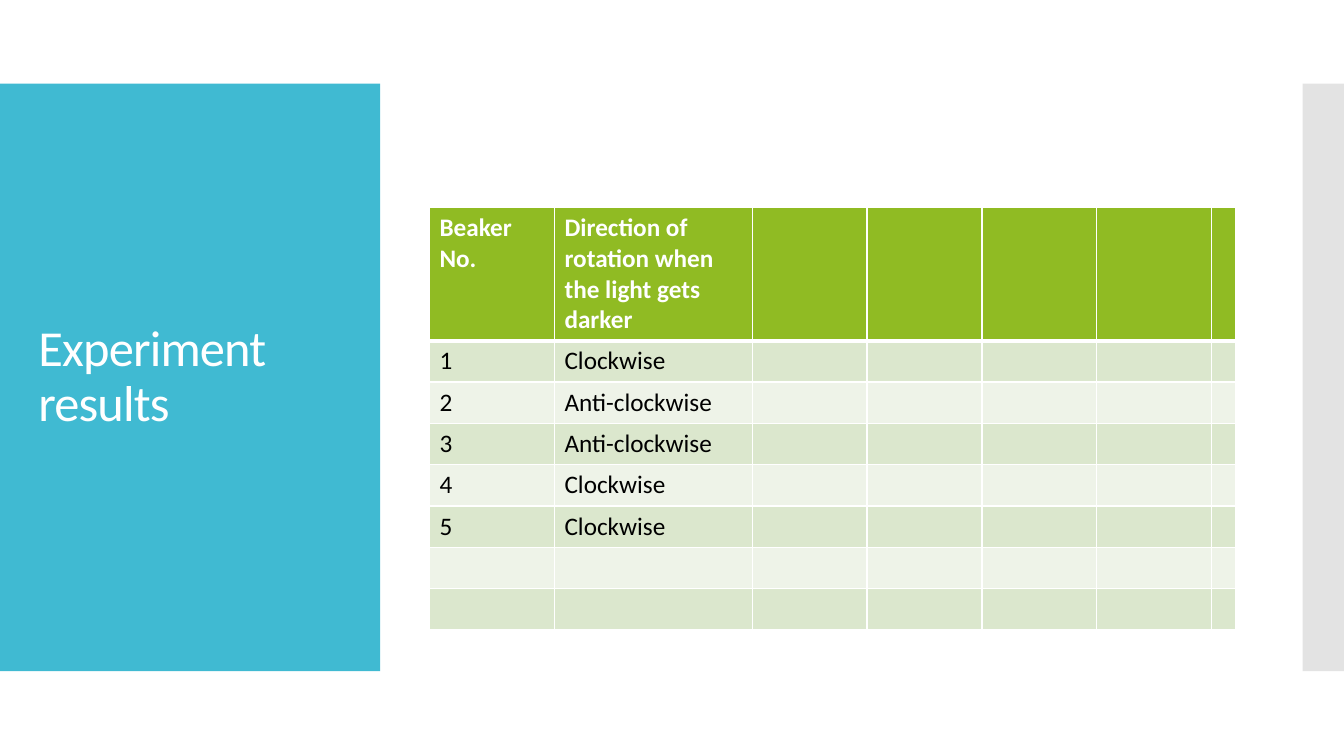
from lxml import etree
from pptx import Presentation
from pptx.dml.color import RGBColor
from pptx.enum.shapes import MSO_SHAPE
from pptx.enum.text import MSO_ANCHOR, MSO_AUTO_SIZE, PP_ALIGN
from pptx.oxml.ns import qn
from pptx.util import Emu, Pt

RECTANGLE = MSO_SHAPE.RECTANGLE
MIDDLE = MSO_ANCHOR.MIDDLE
LEFT = PP_ALIGN.LEFT
NO_AUTOFIT = MSO_AUTO_SIZE.NONE

EMU_PER_PX = 9144  # 100 px to the inch
TITLE_ONLY = 5

WHITE, BLACK = "FFFFFF", "000000"
TEAL, GREY, GREEN = "40BAD2", "C8C8C8", "90BB23"
BANDS = ("DBE7CD", "EEF3E8")

COLUMN_WIDTHS = [124, 196] + [114] * 4 + [23]
ROW_HEIGHTS = [127] + [41] * 7
RESULTS = [
    ("Beaker No.", "Direction of rotation when the light gets darker"),
    ("1", "Clockwise"),
    ("2", "Anti-clockwise"),
    ("3", "Anti-clockwise"),
    ("4", "Clockwise"),
    ("5", "Clockwise"),
]


def px(length):
    return Emu(length * EMU_PER_PX)


def color(hex_string):
    return RGBColor.from_string(hex_string)


def write(frame, text, font="Calibri", size=18, ink=BLACK, bold=False,
          line_spacing=None, tracking=None):
    """Fill the first paragraph; tracking is in hundredths of a point."""
    para = frame.paragraphs[0]
    para.alignment = LEFT
    if line_spacing:
        para.line_spacing = line_spacing
    for index, line in enumerate(text.split("\n")):
        if index:
            para.add_line_break()
        span = para.add_run()
        span.text = line
        span.font.name = font
        span.font.size = Pt(size)
        span.font.bold = bold
        span.font.color.rgb = color(ink)
        if tracking is not None:
            span.font._element.set("spc", str(tracking))


def set_borders(cell, **widths):
    """Draw white borders, in points, for the sides L, R, T and B."""
    properties = cell._tc.get_or_add_tcPr()
    for index, side in enumerate("LRTB"):
        line = etree.Element(qn(f"a:ln{side}"), w=str(Pt(widths.get(side, 1))))
        fill = etree.SubElement(line, qn("a:solidFill"))
        etree.SubElement(fill, qn("a:srgbClr"), val=WHITE)
        properties.insert(index, line)


class SlideBuilder:
    def __init__(self, deck):
        self.page = deck.slides.add_slide(deck.slide_layouts[TITLE_ONLY])

    def panel(self, left, top, width, height, fill, opacity=100):
        box = self.page.shapes.add_shape(
            RECTANGLE, px(left), px(top), px(width), px(height))
        box.shadow.inherit = False
        box.line.fill.background()
        box.fill.solid()
        box.fill.fore_color.rgb = color(fill)
        if opacity < 100:
            tone = box._element.spPr.find(".//" + qn("a:srgbClr"))
            etree.SubElement(tone, qn("a:alpha"), val=str(opacity * 1000))

    def title(self, text, left, top, width, height):
        box = self.page.shapes.title
        box.left, box.top, box.width, box.height = map(px, (left, top, width, height))
        self.page.shapes._spTree.append(box._element)  # in front of the panels
        frame = box.text_frame
        frame.word_wrap = True
        frame.auto_size = NO_AUTOFIT
        frame.vertical_anchor = MIDDLE
        write(frame, text, size=36, ink=WHITE, line_spacing=0.9, tracking=-60)

    def table(self, left, top, widths, heights, rows):
        table = self.page.shapes.add_table(
            len(heights), len(widths), px(left), px(top),
            px(sum(widths)), px(sum(heights))).table
        table.horz_banding = False
        for column, width in zip(table.columns, widths):
            column.width = px(width)
        for row_index, height in enumerate(heights):
            row = table.rows[row_index]
            row.height = px(height)
            header = row_index == 0
            texts = rows[row_index] if row_index < len(rows) else ()
            for column_index, cell in enumerate(row.cells):
                cell.fill.solid()
                cell.fill.fore_color.rgb = color(
                    GREEN if header else BANDS[(row_index - 1) % 2])
                set_borders(cell, T=3 if row_index == 1 else 1, B=3 if header else 1)
                if column_index < len(texts):
                    write(cell.text_frame, texts[column_index],
                          ink=WHITE if header else BLACK, bold=header)


def main():
    deck = Presentation()
    deck.slide_width, deck.slide_height = px(1333), px(750)
    slide = SlideBuilder(deck)
    slide.panel(0, 83, 377, 583, TEAL)
    slide.panel(1292, 83, 41, 583, GREY, opacity=50)
    slide.title("Experiment\nresults", 28, 123, 322, 503)
    slide.table(426, 206, COLUMN_WIDTHS, ROW_HEIGHTS, RESULTS)
    deck.save("out.pptx")


if __name__ == "__main__":
    main()
